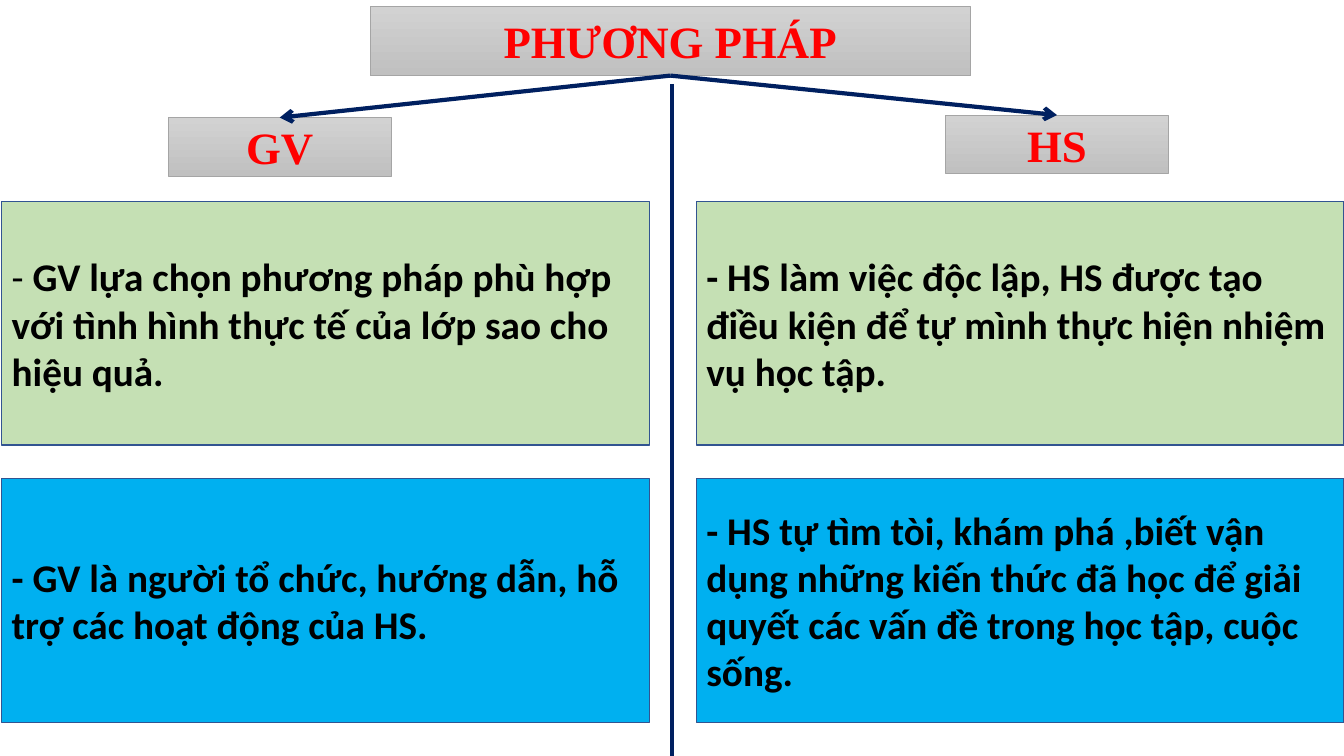
import pptx
import pptx.util
import pptx.dml.color
import pptx.enum.shapes
import pptx.enum.text
import pptx.oxml
import pptx.oxml.ns
from pptx.util import Pt


def color(hex_string):
    return pptx.dml.color.RGBColor.from_string(hex_string)


class MethodSlide:
    navy = "002060"
    heading_text = "FF0000"
    heading_top, heading_bottom, heading_border = "D2D2D2", "C0C0C0", "A5A5A5"
    card_border = "325491"
    card_text = "000000"

    def __init__(self, slide):
        self.slide = slide

    def box(self, left, top, width, height, border, border_width):
        shape = self.slide.shapes.add_shape(
            pptx.enum.shapes.MSO_SHAPE.RECTANGLE,
            Pt(left), Pt(top), Pt(width), Pt(height))
        shape.shadow.inherit = False
        shape.line.color.rgb = color(border)
        shape.line.width = Pt(border_width)
        shape.text_frame.word_wrap = True
        shape.text_frame.vertical_anchor = pptx.enum.text.MSO_ANCHOR.MIDDLE
        return shape

    def style(self, paragraph, font_name, size, text_color, alignment):
        paragraph.alignment = alignment
        paragraph.font.name = font_name
        paragraph.font.size = Pt(size)
        paragraph.font.bold = True
        paragraph.font.color.rgb = color(text_color)

    def heading(self, text, left, top, width, height):
        shape = self.box(left, top, width, height, self.heading_border, 0.5)
        shape.fill.gradient()
        shape.fill.gradient_angle = 270
        stops = shape.fill.gradient_stops
        for stop, shade, position in zip(
                stops, (self.heading_top, self.heading_bottom), (0, 1)):
            stop.color.rgb = color(shade)
            stop.position = position
        paragraph = shape.text_frame.paragraphs[0]
        paragraph.add_run().text = text
        self.style(paragraph, "Times New Roman", 32, self.heading_text,
                   pptx.enum.text.PP_ALIGN.CENTER)

    def card(self, text, left, top, width, height, background, light_dash=False):
        shape = self.box(left, top, width, height, self.card_border, 1)
        shape.fill.solid()
        shape.fill.fore_color.rgb = color(background)
        paragraph = shape.text_frame.paragraphs[0]
        self.style(paragraph, "Calibri", 28, self.card_text,
                   pptx.enum.text.PP_ALIGN.LEFT)
        if light_dash:
            dash = paragraph.add_run()
            dash.text = "- "
            dash.font.bold = False
        else:
            text = "- " + text
        paragraph.add_run().text = text

    def line(self, start, end, arrow=False):
        connector = self.slide.shapes.add_connector(
            pptx.enum.shapes.MSO_CONNECTOR.STRAIGHT,
            *(Pt(value) for value in start + end))
        connector.line.color.rgb = color(self.navy)
        connector.line.width = Pt(3)
        if arrow:
            tail = pptx.oxml.parse_xml(
                "<a:tailEnd %s type='arrow'/>" % pptx.oxml.ns.nsdecls("a"))
            connector.line._get_or_add_ln().append(tail)
        connector._element.spPr.append(pptx.oxml.parse_xml(
            "<a:effectLst %s/>" % pptx.oxml.ns.nsdecls("a")))


def main():
    presentation = pptx.Presentation()
    presentation.slide_width = Pt(960)
    presentation.slide_height = Pt(540)
    page = MethodSlide(presentation.slides.add_slide(presentation.slide_layouts[6]))

    title_bottom = (478.8, 54)
    page.heading("PHƯƠNG PHÁP", 264.2, 4.5, 429.2, 49.5)
    page.line((480, 60), (480, 540))

    role_width, role_height = 159.2, 42
    for role, left, top in (("GV", 120.2, 84), ("HS", 675.4, 82.2)):
        page.heading(role, left, top, role_width, role_height)
        page.line(title_bottom, (left + role_width / 2, top), arrow=True)

    duties = (
        ("C5E0B4", (
            "GV lựa chọn phương pháp phù hợp với tình hình thực tế của lớp "
            "sao cho hiệu quả.",
            "HS làm việc độc lập, HS được tạo điều kiện để tự mình thực hiện "
            "nhiệm vụ học tập.")),
        ("00B0F0", (
            "GV là người tổ chức, hướng dẫn, hỗ trợ các hoạt động của HS.",
            "HS tự tìm tòi, khám phá ,biết vận dụng những kiến thức đã học để "
            "giải quyết các vấn đề trong học tập, cuộc sống.")),
    )
    for row, (background, texts) in enumerate(duties):
        for column, text in enumerate(texts):
            page.card(text, 1.3 + 496.2 * column, 144 + 198 * row, 462.5, 174,
                      background, light_dash=row == column == 0)

    presentation.save("out.pptx")


if __name__ == "__main__":
    main()
